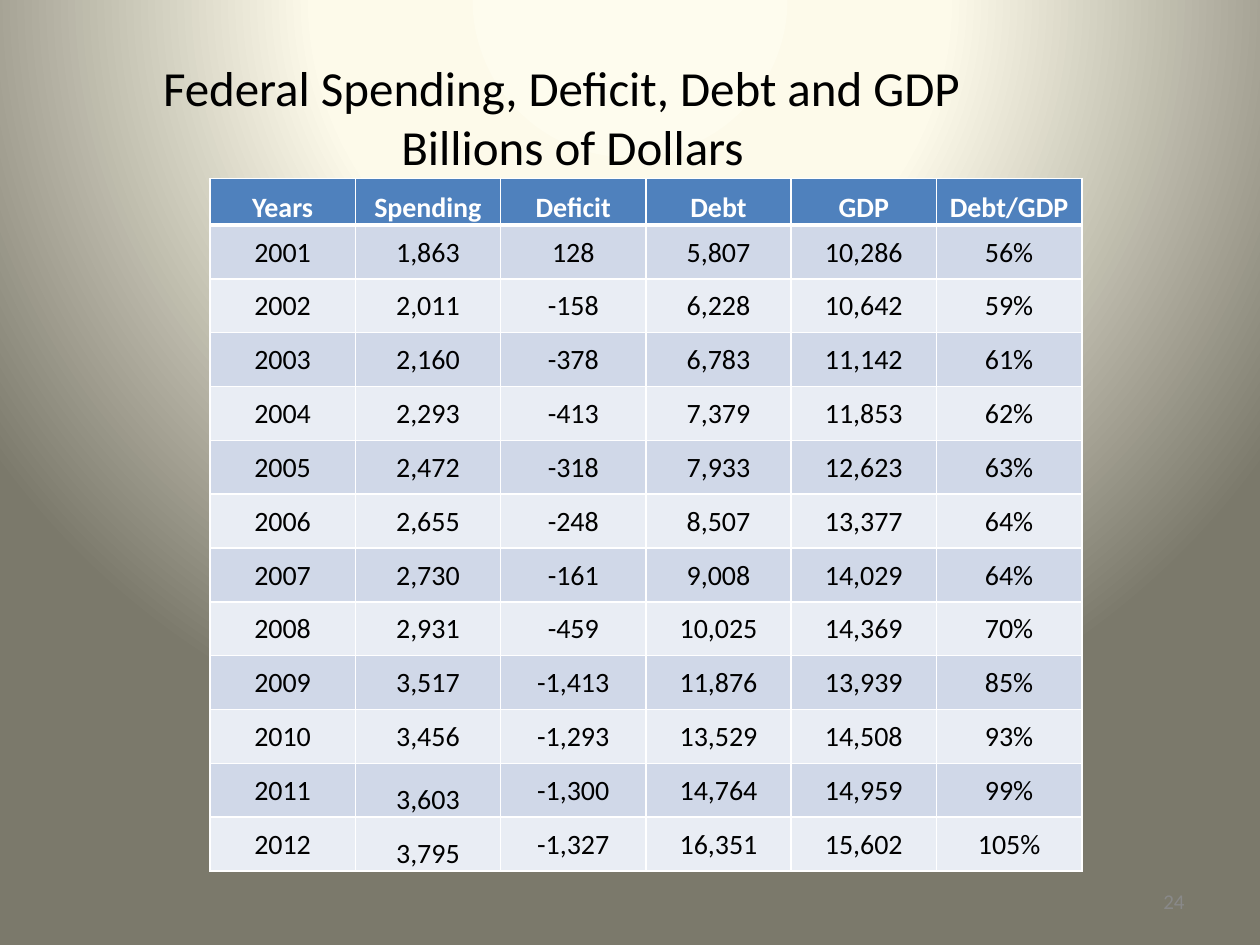
from dataclasses import dataclass

import lxml.etree
import pptx
import pptx.dml.color
import pptx.enum.text
import pptx.oxml
import pptx.oxml.ns
import pptx.util

Pt = pptx.util.Pt
ALIGN = pptx.enum.text.PP_ALIGN
ANCHOR = pptx.enum.text.MSO_ANCHOR
FONT = "Calibri"
BLACK, WHITE, GREY = "000000", "FFFFFF", "898989"
HEADER_FILL = "4F81BD"
BAND_FILLS = ("D0D8E8", "E9EDF4")

HEADINGS = ("Years", "Spending", "Deficit", "Debt", "GDP", "Debt/GDP")
BUDGET_ROWS = (
    ("2001", "1,863", "128", "5,807", "10,286", "56%"),
    ("2002", "2,011", "-158", "6,228", "10,642", "59%"),
    ("2003", "2,160", "-378", "6,783", "11,142", "61%"),
    ("2004", "2,293", "-413", "7,379", "11,853", "62%"),
    ("2005", "2,472", "-318", "7,933", "12,623", "63%"),
    ("2006", "2,655", "-248", "8,507", "13,377", "64%"),
    ("2007", "2,730", "-161", "9,008", "14,029", "64%"),
    ("2008", "2,931", "-459", "10,025", "14,369", "70%"),
    ("2009", "3,517", "-1,413", "11,876", "13,939", "85%"),
    ("2010", "3,456", "-1,293", "13,529", "14,508", "93%"),
    ("2011", "3,603", "-1,300", "14,764", "14,959", "99%"),
    ("2012", "3,795", "-1,327", "16,351", "15,602", "105%"),
)
LOW_CELLS = ("3,603", "3,795")  # spending figures set at the cell bottom
COLUMN_WIDTH, HEADER_HEIGHT, ROW_HEIGHT = 83.04, 26.64, 30.78


@dataclass
class TextStyle:
    size: float
    color: str = BLACK
    bold: bool = False
    align: ALIGN = ALIGN.CENTER


@dataclass
class Label:
    text: str
    left: float
    top: float
    width: float
    height: float
    style: TextStyle


LABELS = (
    Label("Federal Spending, Deficit, Debt and GDP \v Billions of Dollars",
          0, 21.6, 648, 90, TextStyle(28)),
    Label("24", 516, 500.5, 168, 28.75, TextStyle(12, GREY, align=ALIGN.RIGHT)),
)


def rgb(color: str) -> pptx.dml.color.RGBColor:
    return pptx.dml.color.RGBColor.from_string(color)


def style_text(text_frame, style: TextStyle) -> None:
    for paragraph in text_frame.paragraphs:
        paragraph.alignment = style.align
        for run in paragraph.runs:
            run.font.name = FONT
            run.font.size = Pt(style.size)
            run.font.bold = style.bold
            run.font.color.rgb = rgb(style.color)


def paint_background(slide) -> None:
    """Fill the background with a circular gradient centred above the slide."""
    fill = slide.background.fill
    fill.solid()
    stops = "".join(
        f'<a:gs pos="{position * 1000}"><a:srgbClr val="{color}"/></a:gs>'
        for position, color in ((0, "FEFCEE"), (40, "FDFAEA"), (100, "7B796B")))
    gradient = pptx.oxml.parse_xml(
        f'<a:gradFill {pptx.oxml.ns.nsdecls("a")} rotWithShape="1">'
        f'<a:gsLst>{stops}</a:gsLst><a:path path="circle">'
        '<a:fillToRect l="50000" t="-80000" r="50000" b="180000"/>'
        '</a:path></a:gradFill>')
    solid = slide.background._cSld.find(".//" + pptx.oxml.ns.qn("a:solidFill"))
    solid.getparent().replace(solid, gradient)


def add_label(slide, label: Label) -> None:
    shape = slide.shapes.add_textbox(
        Pt(label.left), Pt(label.top), Pt(label.width), Pt(label.height))
    text_frame = shape.text_frame
    text_frame.word_wrap = True
    text_frame.vertical_anchor = ANCHOR.MIDDLE
    text_frame.text = label.text
    style_text(text_frame, label.style)


def set_borders(cell, top: float, bottom: float) -> None:
    properties = cell._tc.get_or_add_tcPr()
    sides = (("lnL", 1), ("lnR", 1), ("lnT", top), ("lnB", bottom))
    for position, (side, width) in enumerate(sides):
        line = lxml.etree.Element(pptx.oxml.ns.qn(f"a:{side}"), w=str(Pt(width)))
        fill = lxml.etree.SubElement(line, pptx.oxml.ns.qn("a:solidFill"))
        lxml.etree.SubElement(fill, pptx.oxml.ns.qn("a:srgbClr"), val=WHITE)
        properties.insert(position, line)


def fill_cell(cell, text: str, row: int) -> None:
    header = row == 0
    cell.text_frame.text = text
    style_text(cell.text_frame,
               TextStyle(16, WHITE if header else BLACK, bold=header))
    cell.margin_left = cell.margin_right = cell.margin_top = Pt(0.72)
    cell.margin_bottom = Pt(0)
    low = header or text in LOW_CELLS
    cell.vertical_anchor = ANCHOR.BOTTOM if low else ANCHOR.MIDDLE
    cell.fill.solid()
    cell.fill.fore_color.rgb = rgb(
        HEADER_FILL if header else BAND_FILLS[(row - 1) % 2])
    set_borders(cell, top=3 if row == 1 else 1, bottom=3 if header else 1)


def add_budget_table(slide) -> None:
    rows = (HEADINGS, *BUDGET_ROWS)
    table = slide.shapes.add_table(
        len(rows), len(HEADINGS), Pt(120), Pt(102),
        Pt(COLUMN_WIDTH * len(HEADINGS)),
        Pt(HEADER_HEIGHT + ROW_HEIGHT * len(BUDGET_ROWS))).table
    table.horz_banding = False
    for column in table.columns:
        column.width = Pt(COLUMN_WIDTH)
    for index, values in enumerate(rows):
        table.rows[index].height = Pt(ROW_HEIGHT if index else HEADER_HEIGHT)
        for column_index, value in enumerate(values):
            fill_cell(table.cell(index, column_index), value, index)


def main() -> None:
    presentation = pptx.Presentation()
    presentation.slide_width, presentation.slide_height = Pt(720), Pt(540)
    slide = presentation.slides.add_slide(presentation.slide_layouts[6])
    paint_background(slide)
    # Title and slide number
    for label in LABELS:
        add_label(slide, label)
    # Yearly figures
    add_budget_table(slide)
    presentation.save("out.pptx")


if __name__ == "__main__":
    main()
